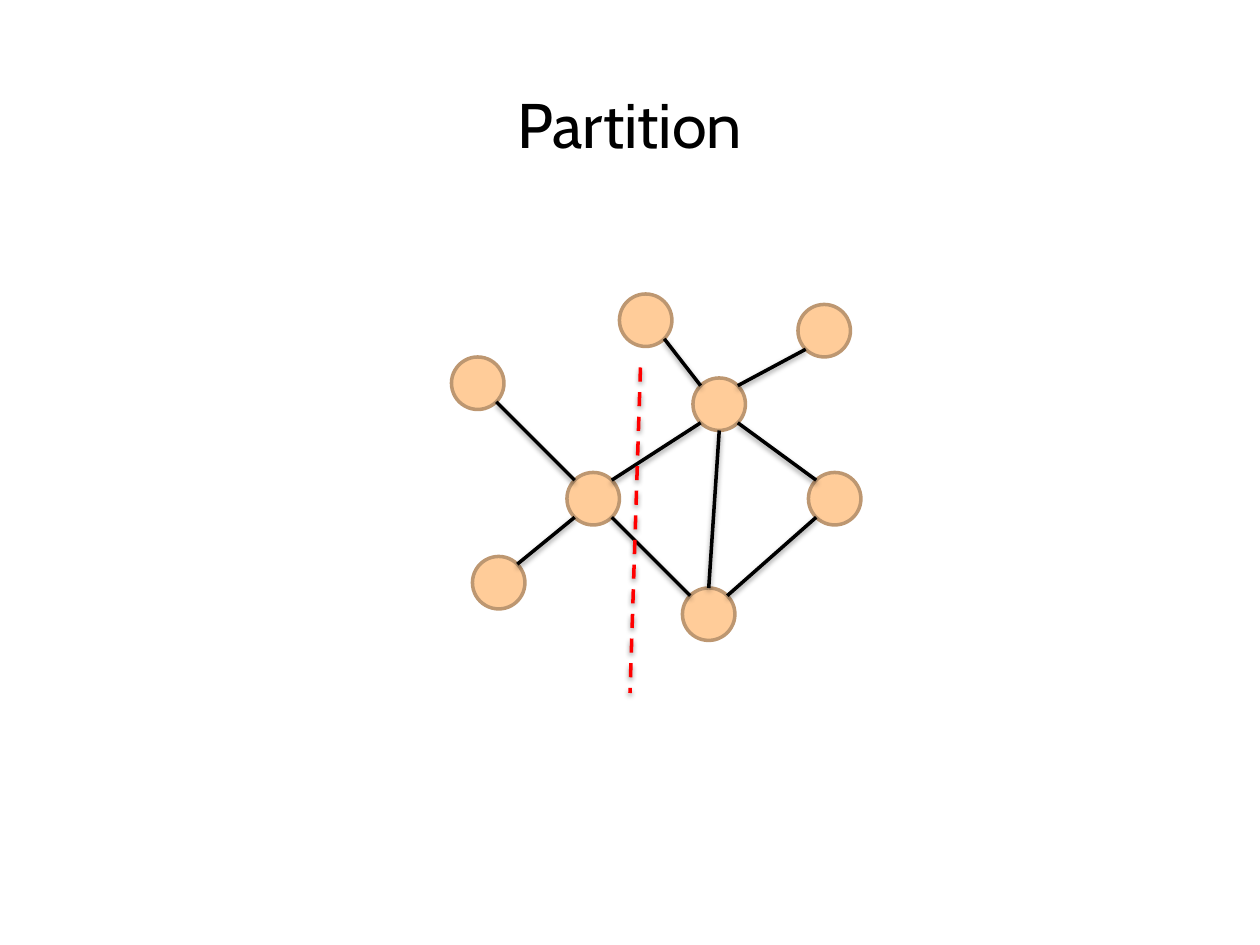
from lxml.etree import SubElement
from math import sqrt
from pptx import Presentation
from pptx.dml.color import RGBColor
from pptx.enum.dml import MSO_LINE_DASH_STYLE as Dash
from pptx.enum.shapes import MSO_CONNECTOR as Connector, MSO_SHAPE as Shape
from pptx.enum.text import MSO_ANCHOR as Anchor, PP_ALIGN as Align
from pptx.oxml.ns import qn
from pptx.util import Pt

TITLE = "Partition"
NODES = {
    "upper left": (273, 219),
    "left hub": (339, 285),
    "right hub": (411, 231),
    "bottom": (405, 351),
    "lower left": (285, 333),
    "top": (369, 183),
    "upper right": (471, 189),
    "right": (477, 285),
}
EDGES = [
    ("upper left", "left hub"),
    ("left hub", "right hub"),
    ("left hub", "bottom"),
    ("left hub", "lower left"),
    ("top", "right hub"),
    ("upper right", "right hub"),
    ("right", "bottom"),
    ("right", "right hub"),
    ("right hub", "bottom"),
]
CUT = ((366, 210), (360, 396))

RADIUS = 15
LINE_WIDTH = 2
STEEP = 10
PEACH = RGBColor(0xFF, 0xCC, 0x99)
BROWN = RGBColor(0xBD, 0x97, 0x71)
BLACK = RGBColor(0, 0, 0)
RED = RGBColor(0xFF, 0, 0)


def rim_point(center, toward):
    dx, dy = toward[0] - center[0], toward[1] - center[1]
    down = 1 if dy > 0 else -1
    if abs(dx) < STEEP:
        return center[0], center[1] + down * RADIUS
    across = 1 if dx > 0 else -1
    reach = RADIUS / sqrt(2)
    return center[0] + across * reach, center[1] + down * reach


def add_line(shapes, start, end, color, dash=None):
    line = shapes.add_connector(Connector.STRAIGHT, *map(Pt, start + end))
    line.line.color.rgb = color
    line.line.width = Pt(LINE_WIDTH)
    if dash:
        line.line.dash_style = dash
    effects = SubElement(line._element.spPr, qn("a:effectLst"))
    shadow = SubElement(effects, qn("a:outerShdw"), blurRad=str(Pt(3.1)),
                        dist=str(Pt(1.6)), dir="5400000", rotWithShape="0")
    shade = SubElement(shadow, qn("a:srgbClr"), val=str(BLACK))
    SubElement(shade, qn("a:alpha"), val="38000")


def add_node(shapes, center):
    x, y = center
    node = shapes.add_shape(Shape.OVAL, Pt(x - RADIUS), Pt(y - RADIUS),
                            Pt(2 * RADIUS), Pt(2 * RADIUS))
    node.shadow.inherit = False
    node.fill.solid()
    node.fill.fore_color.rgb = PEACH
    node.line.color.rgb = BROWN
    node.line.width = Pt(LINE_WIDTH)


def add_title(shapes):
    title = shapes.title
    title.left, title.top, title.width, title.height = map(Pt, (0, 43.2, 720, 54))
    title.text_frame.text = TITLE
    title.text_frame.vertical_anchor = Anchor.MIDDLE
    heading = title.text_frame.paragraphs[0]
    heading.alignment = Align.CENTER
    heading.font.name = "Cabin"
    heading.font.size = Pt(36)
    heading.font.color.rgb = BLACK


def main():
    deck = Presentation()
    deck.slide_width, deck.slide_height = Pt(720), Pt(540)
    shapes = deck.slides.add_slide(deck.slide_layouts[5]).shapes
    add_title(shapes)
    for center in NODES.values():
        add_node(shapes, center)
    for first, second in EDGES:
        a, b = NODES[first], NODES[second]
        add_line(shapes, rim_point(a, b), rim_point(b, a), BLACK)
    add_line(shapes, *CUT, RED, Dash.DASH)
    deck.save("out.pptx")


if __name__ == "__main__":
    main()
